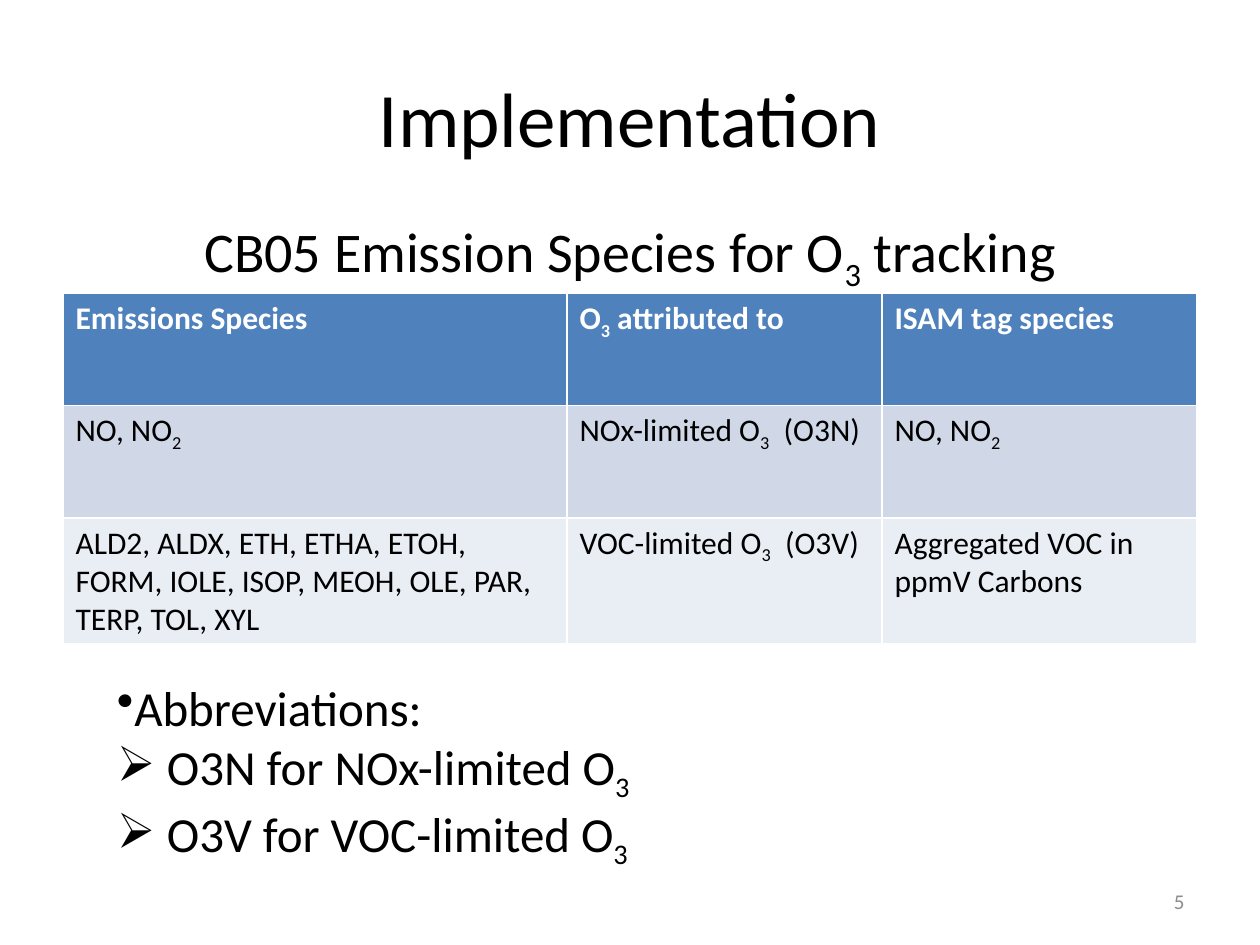
from dataclasses import dataclass

from lxml import etree
from pptx import Presentation
from pptx.dml.color import RGBColor
from pptx.enum.text import MSO_ANCHOR, PP_ALIGN
from pptx.oxml.ns import qn
from pptx.util import Inches, Pt

LEFT, CENTER, RIGHT = PP_ALIGN.LEFT, PP_ALIGN.CENTER, PP_ALIGN.RIGHT
TOP, MIDDLE = MSO_ANCHOR.TOP, MSO_ANCHOR.MIDDLE


@dataclass(frozen=True)
class Theme:
    font: str = "Calibri"
    text: str = "000000"
    muted: str = "8C8C8C"
    header_text: str = "FFFFFF"
    header_fill: str = "4F81BD"
    band_fills: tuple = ("D0D8E8", "E9EDF4")
    title: int = 44
    subtitle: int = 32
    notes: int = 28
    table: int = 18
    number: int = 12


THEME = Theme()

# Text between tildes is set as subscript
COLUMN_WIDTHS = (4, 2.5, 2.5)
SPECIES_ROWS = (
    ("Emissions Species", "O~3~ attributed to", "ISAM tag species"),
    ("NO, NO~2~", "NOx-limited O~3~  (O3N)", "NO, NO~2~"),
    ("ALD2, ALDX, ETH, ETHA, ETOH, FORM, IOLE, ISOP, MEOH, OLE, PAR, "
     "TERP, TOL, XYL",
     "VOC-limited O~3~  (O3V)", "Aggregated VOC in ppmV Carbons"),
)
ABBREVIATIONS = (
    ("•", "Abbreviations:"),
    ("➢", " O3N for NOx-limited O~3~"),
    ("➢", " O3V for VOC-limited O~3~"),
)


def add_runs(p, text, size, color=THEME.text, bold=False):
    for i, part in enumerate(text.split("~")):
        if not part:
            continue
        r = p.add_run()
        r.text = part
        r.font.name = THEME.font
        r.font.size = Pt(size)
        r.font.bold = bold
        r.font.color.rgb = RGBColor.from_string(color)
        if i % 2:
            r.font._element.set("baseline", "-25000")


def add_frame(slide, box, anchor=MIDDLE):
    tf = slide.shapes.add_textbox(*map(Inches, box)).text_frame
    tf.word_wrap = True
    tf.vertical_anchor = anchor
    return tf


def add_line(slide, box, text, size, align=CENTER, color=THEME.text):
    p = add_frame(slide, box).paragraphs[0]
    p.alignment = align
    add_runs(p, text, size, color)


def add_species_table(slide, box):
    table = slide.shapes.add_table(
        len(SPECIES_ROWS), len(COLUMN_WIDTHS), *map(Inches, box)).table
    for column, width in zip(table.columns, COLUMN_WIDTHS):
        column.width = Inches(width)
    for i, texts in enumerate(SPECIES_ROWS):
        header = i == 0
        fill = THEME.header_fill if header else THEME.band_fills[(i - 1) % 2]
        color = THEME.header_text if header else THEME.text
        for j, text in enumerate(texts):
            cell = table.cell(i, j)
            cell.fill.solid()
            cell.fill.fore_color.rgb = RGBColor.from_string(fill)
            add_runs(cell.text_frame.paragraphs[0], text, THEME.table,
                     color, header)


def add_abbreviations(slide, box):
    tf = add_frame(slide, box, TOP)
    for i, (bullet, text) in enumerate(ABBREVIATIONS):
        p = tf.add_paragraph() if i else tf.paragraphs[0]
        p.alignment = LEFT
        etree.SubElement(p._p.get_or_add_pPr(), qn("a:buChar"), char=bullet)
        add_runs(p, text, THEME.notes)


def main():
    prs = Presentation()
    prs.slide_width, prs.slide_height = Inches(10), Inches(7.5)
    slide = prs.slides.add_slide(prs.slide_layouts[6])

    # Headings
    add_line(slide, (0.5, 0.3, 9, 1.25), "Implementation", THEME.title)
    add_line(slide, (0.5, 1.55, 9, 0.95),
             "CB05 Emission Species for O~3~ tracking", THEME.subtitle)

    # Species table and its abbreviations
    add_species_table(slide, (0.5, 2.33, 9, 2.67))
    add_abbreviations(slide, (0.83, 5.33, 5, 1.51))

    # Slide number
    add_line(slide, (7.17, 6.95, 2.33, 0.4), "5", THEME.number, RIGHT,
             THEME.muted)

    prs.save("out.pptx")


if __name__ == "__main__":
    main()
